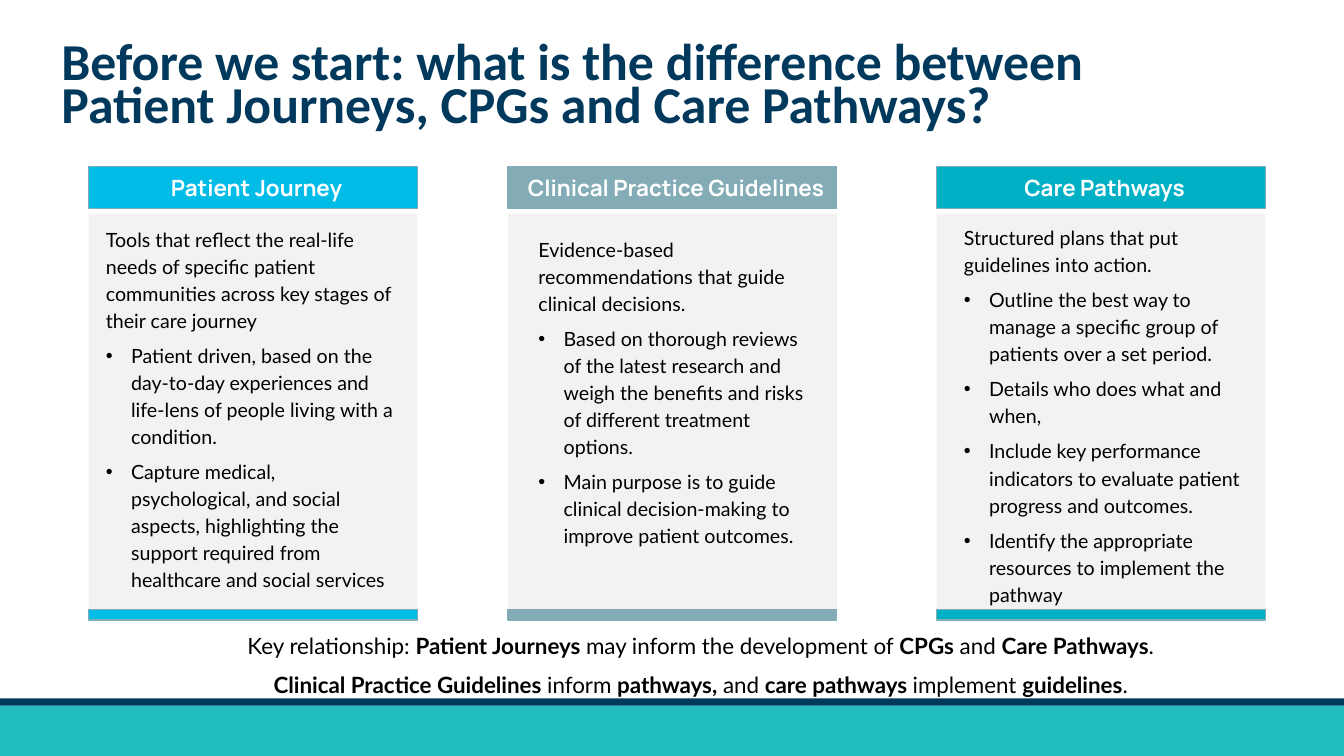
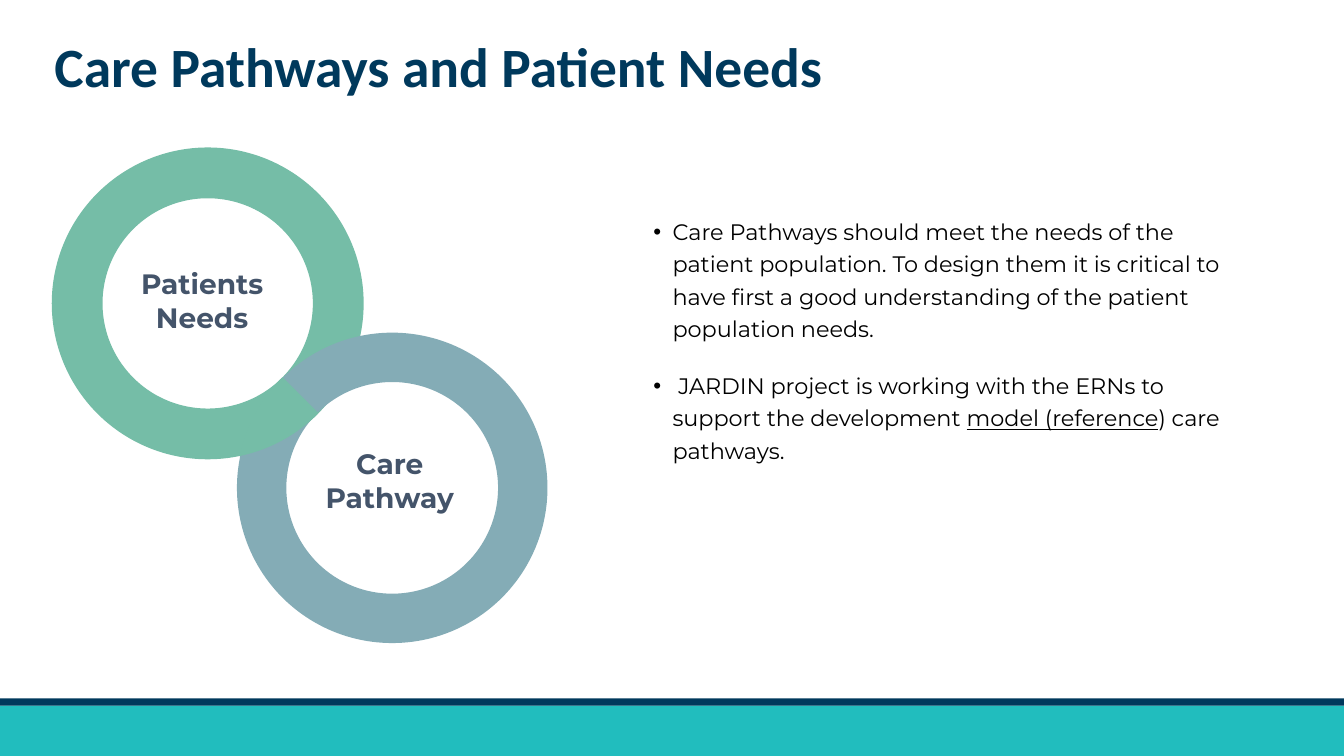
from math import cos, radians, sin
from pptx import Presentation
from pptx.dml.color import RGBColor
from pptx.enum.shapes import MSO_SHAPE
from pptx.enum.text import MSO_ANCHOR, MSO_AUTO_SIZE, PP_ALIGN
from pptx.oxml.ns import qn
from pptx.util import Inches, Pt
from lxml.etree import SubElement

WIDTH, HEIGHT = 13.33, 7.5
NAVY, TEAL, WHITE, BLACK = "00395C", "21BDBE", "FFFFFF", "000000"
SKY, STEEL, AQUA, PANEL = "02BCE8", "84ACB6", "00B1C5", "F2F2F2"
GREEN, SLATE = "75BDA7", "44546A"

TITLE_FONT = {"name": "Calibri", "bold": True}
HEADING_FONT = {"name": "Manrope", "size": Pt(16), "bold": True}
LIST_FONT = {"name": "Lato", "size": Pt(14)}
KEY_FONT = {"name": "Lato", "size": Pt(16)}
BODY_FONT = {"name": "Montserrat", "size": Pt(16)}
LABEL_FONT = {"name": "Montserrat", "size": Pt(20), "bold": True}
LIST_SPACING = {"line_spacing": 1.15, "space_after": Pt(3)}
THIN_INSETS = (0.05, 0.03, 0.05, 0.03)
BAR_INSETS = (0.07, 0, 0, 0)
DEFAULT_INSETS = (0.1, 0.05, 0.1, 0.05)


def color(value):
    return RGBColor.from_string(value)


def set_all(target, values):
    for name, value in values.items():
        setattr(target, name, value)


def place(shape, box):
    for name, value in zip(("left", "top", "width", "height"), box):
        setattr(shape, name, Inches(value))


def paint(shape, fill, line=None):
    shape.shadow.inherit = False
    shape.fill.solid()
    shape.fill.fore_color.rgb = color(fill)
    if line:
        shape.line.color.rgb = color(line)
        shape.line.width = Pt(1)
    else:
        shape.line.fill.background()


def add_block(page, kind, box, fill, line=None):
    shape = page.shapes.add_shape(kind, *map(Inches, box))
    paint(shape, fill, line)
    return shape


def set_frame(frame, anchor, insets=DEFAULT_INSETS):
    set_all(frame, {"word_wrap": True, "auto_size": MSO_AUTO_SIZE.NONE,
                    "vertical_anchor": anchor})
    for side, inset in zip(("left", "top", "right", "bottom"), insets):
        setattr(frame, "margin_" + side, Inches(inset))


def add_bullet(para, indent):
    properties = para._p.get_or_add_pPr()
    properties.set("marL", str(Inches(indent)))
    properties.set("indent", str(-Inches(indent)))
    SubElement(properties, qn("a:buFont")).set("typeface", "Arial")
    SubElement(properties, qn("a:buChar")).set("char", "•")


def write(frame, lines, font, ink, layout, gap=0, first_bullet=None,
          indent=0.25, accent="bold"):
    """Write paragraphs; text between asterisks gets the accent."""
    for number, line in enumerate(lines):
        para = frame.add_paragraph() if number else frame.paragraphs[0]
        if first_bullet is not None and number >= first_bullet:
            add_bullet(para, indent)
        set_all(para, {**layout, "space_before": Pt(gap if number else 0)})
        for part, text in enumerate(line.split("*")):
            span = para.add_run()
            span.text = text
            set_all(span.font, font)
            span.font.color.rgb = color(ink)
            if part % 2:
                setattr(span.font, accent, True)


def add_text(page, box, lines, font, ink, layout, anchor=MSO_ANCHOR.MIDDLE,
             insets=THIN_INSETS, **options):
    frame = page.shapes.add_textbox(*map(Inches, box)).text_frame
    set_frame(frame, anchor, insets)
    write(frame, lines, font, ink, layout, **options)


def add_title(page, box, text, size, spacing):
    title = page.shapes.title
    place(title, box)
    set_frame(title.text_frame, MSO_ANCHOR.MIDDLE)
    write(title.text_frame, [text], {**TITLE_FONT, "size": Pt(size)}, NAVY,
          {"alignment": PP_ALIGN.LEFT, "line_spacing": spacing})


def add_footer_bands(deck, page):
    """Draw the bands and move them to the master, behind everything."""
    tree = deck.slide_master.shapes.element
    for index, (top, height, fill) in enumerate([(7, 0.5, TEAL), (6.93, 0.07, NAVY)]):
        band = add_block(page, MSO_SHAPE.RECTANGLE, (0, top, WIDTH, height), fill)
        tree.insert(2 + index, band.element)


def add_column(page, left, top, fill, heading, text_box, lines):
    """One definition: heading bar, grey panel, text and closing bar."""
    width = 3.26
    bar = add_block(page, MSO_SHAPE.RECTANGLE, (left, top, width, 0.42), fill, STEEL)
    set_frame(bar.text_frame, MSO_ANCHOR.MIDDLE, BAR_INSETS)
    write(bar.text_frame, [heading], HEADING_FONT, WHITE,
          {"alignment": PP_ALIGN.CENTER})
    add_block(page, MSO_SHAPE.RECTANGLE, (left, top + 0.47, width, 3.94), PANEL)
    add_block(page, MSO_SHAPE.RECTANGLE, (left, top + 4.4, width, 0.1), fill, STEEL)
    x, y, text_width, text_height = text_box
    add_text(page, (left + x, top + y, text_width, text_height), lines,
             LIST_FONT, BLACK, LIST_SPACING, gap=2.8, first_bullet=1)


def build_comparison(page):
    add_title(page, (0.51, 0.36, 10.86, 1.05),
              "Before we start: what is the difference between "
              "Patient Journeys, CPGs and Care Pathways?", 37, 0.7)
    columns = [
        (0.88, SKY, "Patient Journey", (0.12, 0.67, 3.01, 3.45), [
            "Tools that reflect the real-life needs of specific patient "
            "communities across key stages of their care journey",
            "Patient driven, based on the day-to-day experiences and "
            "life-lens of people living with a condition.",
            "Capture medical, psychological, and social aspects, highlighting "
            "the support required from healthcare and social services"]),
        (5.04, STEEL, "Clinical Practice Guidelines", (0.25, 0.64, 2.75, 3.18), [
            "Evidence-based recommendations that guide clinical decisions.",
            "Based on thorough reviews of the latest research and weigh the "
            "benefits and risks of different treatment options.",
            "Main purpose is to guide clinical decision-making to improve "
            "patient outcomes."]),
        (9.29, AQUA, "Care Pathways", (0.22, 0.51, 2.89, 3.9), [
            "Structured plans that put guidelines into action.",
            "Outline the best way to manage a specific group of patients "
            "over a set period.",
            "Details who does what and when,",
            "Include key performance indicators to evaluate patient progress "
            "and outcomes.",
            "Identify the appropriate resources to implement the pathway"]),
    ]
    for left, fill, heading, text_box, lines in columns:
        add_column(page, left, 1.65, fill, heading, text_box, lines)
    # Key relationship
    add_text(page, (2.1, 6.21, 9.7, 0.74), [
        "Key relationship: *Patient Journeys *may inform the development of "
        "*CPGs* and *Care Pathways*.",
        "*Clinical Practice Guidelines *inform *pathways,* and "
        "*care pathways *implement *guidelines*."],
        KEY_FONT, BLACK, {**LIST_SPACING, "alignment": PP_ALIGN.CENTER}, gap=3.2)


def arc(center, radius, start, end, steps=24):
    angles = [radians(start + (end - start) * i / steps) for i in range(steps + 1)]
    return [(Inches(center[0] + radius * cos(a)), Inches(center[1] + radius * sin(a)))
            for a in angles]


def add_linked_rings(page, left, top):
    """Two interlocked rings, the second down and right of the first."""
    radius, band, shift = 1.54, 0.49, 1.83
    first = (left + radius, top + radius)
    second = (first[0] + shift, first[1] + shift)
    for (x, y), fill, line in ((first, GREEN, GREEN), (second, STEEL, None)):
        ring = add_block(page, MSO_SHAPE.DONUT,
                         (x - radius, y - radius, 2 * radius, 2 * radius), fill, line)
        ring.adjustments[0] = band / (2 * radius)
    # Part of the first ring that passes over the second
    outline = arc(first, radius, 45, 78) + arc(second, radius, 192, 225)
    builder = page.shapes.build_freeform(*outline[0])
    builder.add_line_segments(outline[1:], close=True)
    paint(builder.convert_to_shape(), GREEN, GREEN)
    # Labels
    for (x, y), text, dx, dy in ((first, "Patients Needs", -1.03, -0.42),
                                 (second, "Care Pathway", -1, -0.46)):
        add_text(page, (x + dx, y + dy, 1.95, 0.77), [text], LABEL_FONT, SLATE,
                 {"alignment": PP_ALIGN.CENTER}, MSO_ANCHOR.BOTTOM, DEFAULT_INSETS)


def build_needs(page):
    add_title(page, (0.44, 0.31, 9.2, 0.76), "Care Pathways and Patient Needs", 39.6, 0.9)
    add_linked_rings(page, 0.52, 1.47)
    body = page.placeholders[1]
    place(body, (6.43, 2.09, 5.77, 2.54))
    set_frame(body.text_frame, MSO_ANCHOR.BOTTOM, THIN_INSETS)
    write(body.text_frame, [
        "Care Pathways should meet the needs of the patient population. To design "
        "them it is critical to have first a good understanding of the patient "
        "population needs.",
        " JARDIN project is working with the ERNs to support the development "
        "*model (reference*) care pathways."],
        BODY_FONT, BLACK, {"line_spacing": 1.2, "space_after": Pt(18)},
        first_bullet=0, indent=0.19, accent="underline")


def main():
    deck = Presentation()
    deck.slide_width, deck.slide_height = Inches(WIDTH), Inches(HEIGHT)
    comparison = deck.slides.add_slide(deck.slide_layouts[5])
    add_footer_bands(deck, comparison)
    build_comparison(comparison)
    build_needs(deck.slides.add_slide(deck.slide_layouts[1]))
    deck.save("out.pptx")


if __name__ == "__main__":
    main()
